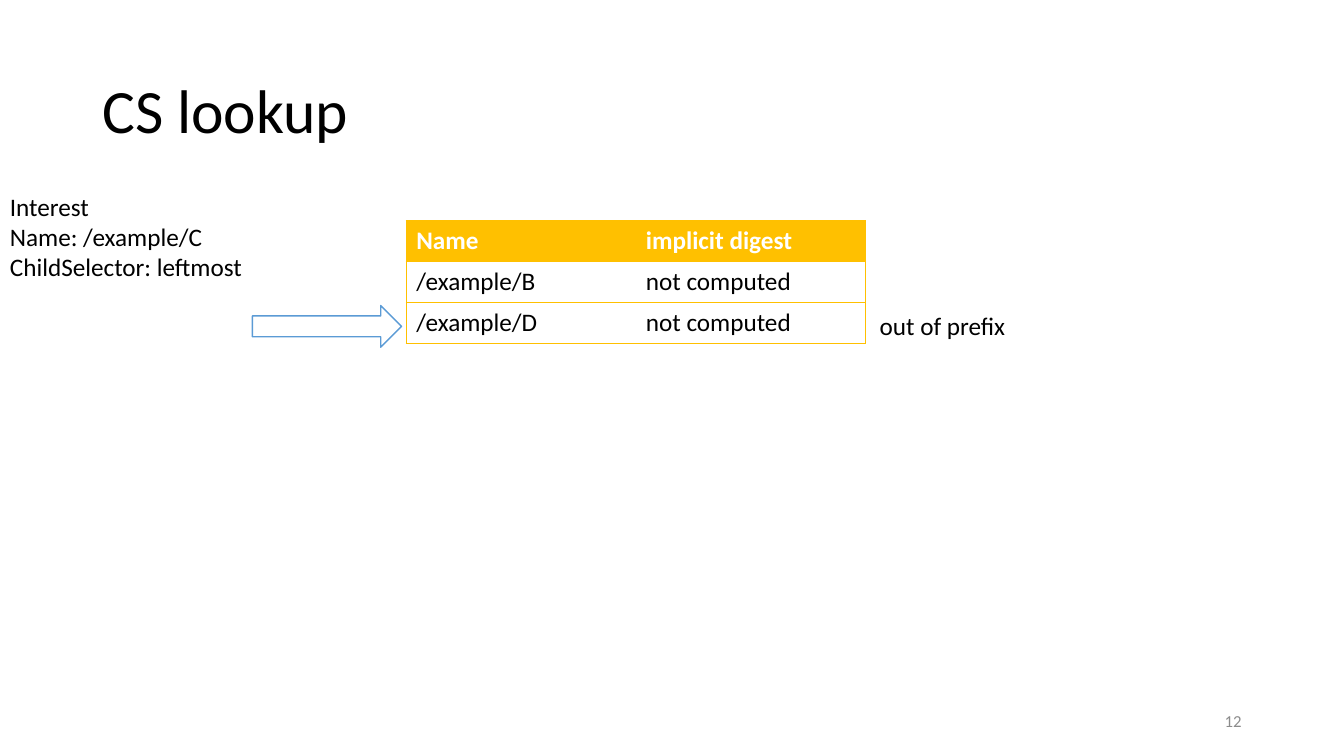
import dataclasses

import pptx
import pptx.dml.color
import pptx.enum.shapes
import pptx.enum.text
import pptx.oxml
import pptx.oxml.ns
import pptx.util

Cm = pptx.util.Cm
Pt = pptx.util.Pt
Anchor = pptx.enum.text.MSO_ANCHOR
Align = pptx.enum.text.PP_ALIGN
Fit = pptx.enum.text.MSO_AUTO_SIZE


def rgb(value):
    return pptx.dml.color.RGBColor.from_string(value)


@dataclasses.dataclass(frozen=True)
class Theme:
    font: str = "Calibri"
    ink: str = "000000"
    paper: str = "FFFFFF"
    gold: str = "FFC000"
    blue: str = "5B9BD5"
    grey: str = "8C8C8C"
    title: int = 44
    body: int = 18
    footer: int = 12
    line: int = 1


class SlideBuilder:
    def __init__(self, slide, theme):
        self.slide = slide
        self.theme = theme

    def style(self, paragraph, size, color, bold=False):
        font = paragraph.font
        formats = {"name": self.theme.font, "size": Pt(size), "bold": bold}
        for name, value in formats.items():
            setattr(font, name, value)
        font.color.rgb = rgb(color)

    def text(self, box, lines, size=None, color=None, frame_format=None, paragraph_format=None):
        """Add a text box; box is left, top, width and height in centimetres."""
        frame = self.slide.shapes.add_textbox(*map(Cm, box)).text_frame
        for name, value in (frame_format or {}).items():
            setattr(frame, name, value)
        frame.text = "\n".join(lines)
        for paragraph in frame.paragraphs:
            self.style(paragraph, size or self.theme.body, color or self.theme.ink)
            for name, value in (paragraph_format or {}).items():
                setattr(paragraph, name, value)

    def label(self, box, *lines):
        """Add unwrapped body text whose box grows with it."""
        self.text(box, lines, frame_format={"word_wrap": False, "auto_size": Fit.SHAPE_TO_FIT_TEXT})

    def border(self, cell, side, color):
        """Draw one side (L, R, T or B) of a cell, or clear it if color is None."""
        paint = f'<a:solidFill><a:srgbClr val="{color}"/></a:solidFill>' if color else "<a:noFill/>"
        cell._tc.get_or_add_tcPr().append(pptx.oxml.parse_xml(
            f'<a:ln{side} {pptx.oxml.ns.nsdecls("a")} w="{Pt(self.theme.line)}">{paint}</a:ln{side}>'))

    def table(self, box, rows):
        theme = self.theme
        columns = len(rows[0])
        table = self.slide.shapes.add_table(len(rows), columns, *map(Cm, box)).table
        table.horz_banding = False
        for r, row in enumerate(rows):
            header = r == 0
            for c, value in enumerate(row):
                cell = table.cell(r, c)
                cell.text = value
                self.style(cell.text_frame.paragraphs[0], theme.body,
                           theme.paper if header else theme.ink, header)
                sides = {
                    "L": theme.gold if c == 0 else None,
                    "R": theme.gold if c == columns - 1 else None,
                    "T": theme.gold,
                    "B": theme.gold,
                }
                for side, color in sides.items():
                    self.border(cell, side, color)
                cell.fill.solid()
                cell.fill.fore_color.rgb = rgb(theme.gold if header else theme.paper)

    def arrow(self, box):
        arrow = self.slide.shapes.add_shape(
            pptx.enum.shapes.MSO_SHAPE.RIGHT_ARROW, *map(Cm, box))
        arrow.shadow.inherit = False
        arrow.fill.solid()
        arrow.fill.fore_color.rgb = rgb(self.theme.paper)
        arrow.line.color.rgb = rgb(self.theme.blue)
        arrow.line.width = Pt(self.theme.line)


def main():
    deck = pptx.Presentation()
    deck.slide_width, deck.slide_height = Cm(33.87), Cm(19.05)
    theme = Theme()
    page = SlideBuilder(deck.slides.add_slide(deck.slide_layouts[6]), theme)
    middle = {"word_wrap": True, "vertical_anchor": Anchor.MIDDLE}

    page.text((2.33, 1.01, 29.21, 3.68), ["CS lookup"], theme.title,
              frame_format=middle, paragraph_format={"line_spacing": 0.9})
    page.label((0, 4.69, 6.45, 2.57), "Interest", "Name: /example/C", "ChildSelector: leftmost")
    page.table((10.24, 5.56, 11.57, 3.09), [
        ("Name", "implicit digest"),
        ("/example/B", "not computed"),
        ("/example/D", "not computed"),
    ])
    page.text((23.92, 17.66, 7.62, 1.01), ["12"], theme.footer, theme.grey,
              middle, {"alignment": Align.RIGHT})
    page.label((21.92, 7.7, 3.71, 1.03), "out of prefix")
    page.arrow((6.36, 7.7, 3.76, 1.05))
    deck.save("out.pptx")


if __name__ == "__main__":
    main()
